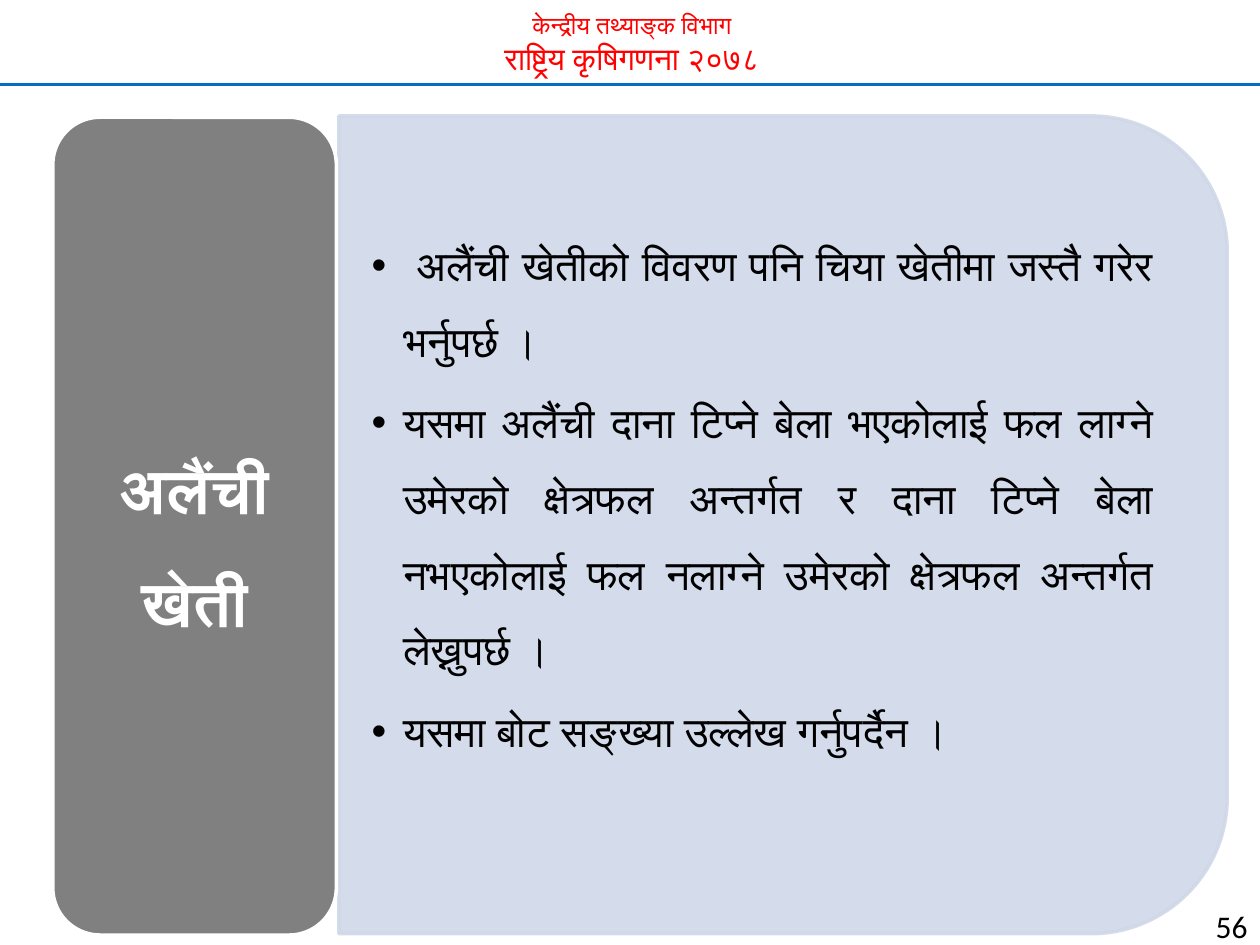
from lxml.etree import SubElement
from pptx import Presentation
from pptx.dml.color import RGBColor as RGB
from pptx.enum.shapes import MSO_CONNECTOR as CONNECTOR, MSO_SHAPE as SHAPE
from pptx.enum.text import MSO_ANCHOR as ANCHOR, PP_ALIGN as ALIGN
from pptx.oxml.ns import qn
from pptx.util import Pt

COLORS = {
    "header": "FF0000",
    "rule": "0070C0",
    "panel": "D0D8E8",
    "label": "808080",
    "white": "FFFFFF",
    "black": "000000",
}

POINTS = [
    " अलैंची खेतीको विवरण पनि चिया खेतीमा जस्तै गरेर भर्नुपर्छ ।",
    "यसमा अलैंची दाना टिप्ने बेला भएकोलाई फल लाग्ने उमेरको क्षेत्रफल अन्तर्गत र "
    "दाना टिप्ने बेला नभएकोलाई फल नलाग्ने उमेरको क्षेत्रफल अन्तर्गत लेख्नुपर्छ ।",
    "यसमा बोट सङ्ख्या उल्लेख गर्नुपर्दैन ।",
]


def write(paragraph, text, *, size, color="black", font="Calibri", bold=False,
          align=ALIGN.LEFT, spacing=1.0, after=0, bullet=False):
    paragraph.alignment = align
    paragraph.line_spacing = spacing
    paragraph.space_before = Pt(0)
    paragraph.space_after = Pt(after)
    if bullet:
        properties = paragraph._p.get_or_add_pPr()
        properties.set("marL", str(Pt(18)))
        properties.set("indent", str(Pt(-18)))
        SubElement(properties, qn("a:buFont"), typeface="Arial")
        SubElement(properties, qn("a:buChar"), char="•")
    run = paragraph.add_run()
    run.text = text
    run.font.size = Pt(size)
    run.font.name = font
    run.font.bold = bold
    run.font.color.rgb = RGB.from_string(COLORS[color])


class Deck:
    def __init__(self, slide):
        self.slide = slide

    def frame(self, shape, insets=(7.2, 3.6, 7.2, 3.6), anchor=ANCHOR.TOP):
        frame = shape.text_frame
        frame.word_wrap = True
        frame.vertical_anchor = anchor
        (frame.margin_left, frame.margin_top,
         frame.margin_right, frame.margin_bottom) = map(Pt, insets)
        return frame

    def text(self, box, lines, insets=(7.2, 3.6, 7.2, 3.6), anchor=ANCHOR.TOP, **style):
        shape = self.slide.shapes.add_textbox(*map(Pt, box))
        frame = self.frame(shape, insets, anchor)
        for index, (line, size) in enumerate(lines):
            paragraph = frame.add_paragraph() if index else frame.paragraphs[0]
            write(paragraph, line, size=size, **style)

    def title(self, box, text, insets, **style):
        shape = self.slide.shapes.title
        shape.left, shape.top, shape.width, shape.height = map(Pt, box)
        frame = self.frame(shape, insets, ANCHOR.MIDDLE)
        write(frame.paragraphs[0], text, **style)
        shape.element.getparent().append(shape.element)

    def shape(self, kind, box, fill, line, rotation=0, opacity=100):
        shape = self.slide.shapes.add_shape(kind, *map(Pt, box))
        shape.shadow.inherit = False
        shape.rotation = rotation
        shape.fill.solid()
        shape.fill.fore_color.rgb = RGB.from_string(COLORS[fill])
        shape.line.color.rgb = RGB.from_string(COLORS[line])
        shape.line.width = Pt(2)
        if opacity < 100:
            for color in shape.element.spPr.iter(qn("a:srgbClr")):
                SubElement(color, qn("a:alpha"), val=str(opacity * 1000))

    def line(self, start, end, color, width):
        connector = self.slide.shapes.add_connector(
            CONNECTOR.STRAIGHT, *map(Pt, (*start, *end)))
        connector.line.color.rgb = RGB.from_string(COLORS[color])
        connector.line.width = Pt(width)
        SubElement(connector.element.spPr, qn("a:effectLst"))


def main():
    presentation = Presentation()
    presentation.slide_width, presentation.slide_height = Pt(720), Pt(540)
    deck = Deck(presentation.slides.add_slide(presentation.slide_layouts[5]))

    deck.text((50.4, 2.2, 621.4, 46),
              [("केन्द्रीय तथ्याङ्क विभाग", 14), ("राष्ट्रिय कृषिगणना २०७८", 18)],
              color="header", align=ALIGN.CENTER)
    deck.line((0, 48.2), (721.4, 48.2), "rule", 1.5)

    deck.shape(SHAPE.ROUND_2_SAME_RECTANGLE, (213.8, 46.1, 467.3, 507.6),
               "panel", "panel", rotation=90, opacity=90)
    deck.text((193, 89.3, 485.3, 421.9), [(point, 24) for point in POINTS],
              insets=(19.4, 10, 19.4, 56), anchor=ANCHOR.MIDDLE, font="Arial",
              align=ALIGN.JUSTIFY, spacing=1.5, after=3.6, bullet=True)

    deck.shape(SHAPE.ROUNDED_RECTANGLE, (30.2, 67, 162, 467.3), "label", "white")
    deck.title((38.2, 74.9, 146.2, 451.4), "अलैंची खेती", (10.8, 5, 10.8, 5),
               size=36, color="white", font="Arial", bold=True,
               align=ALIGN.CENTER, spacing=1.5)

    deck.text((664.6, 504, 55.4, 30.2), [("56", 18)], align=ALIGN.RIGHT, spacing=1.5)
    presentation.save("out.pptx")


if __name__ == "__main__":
    main()
